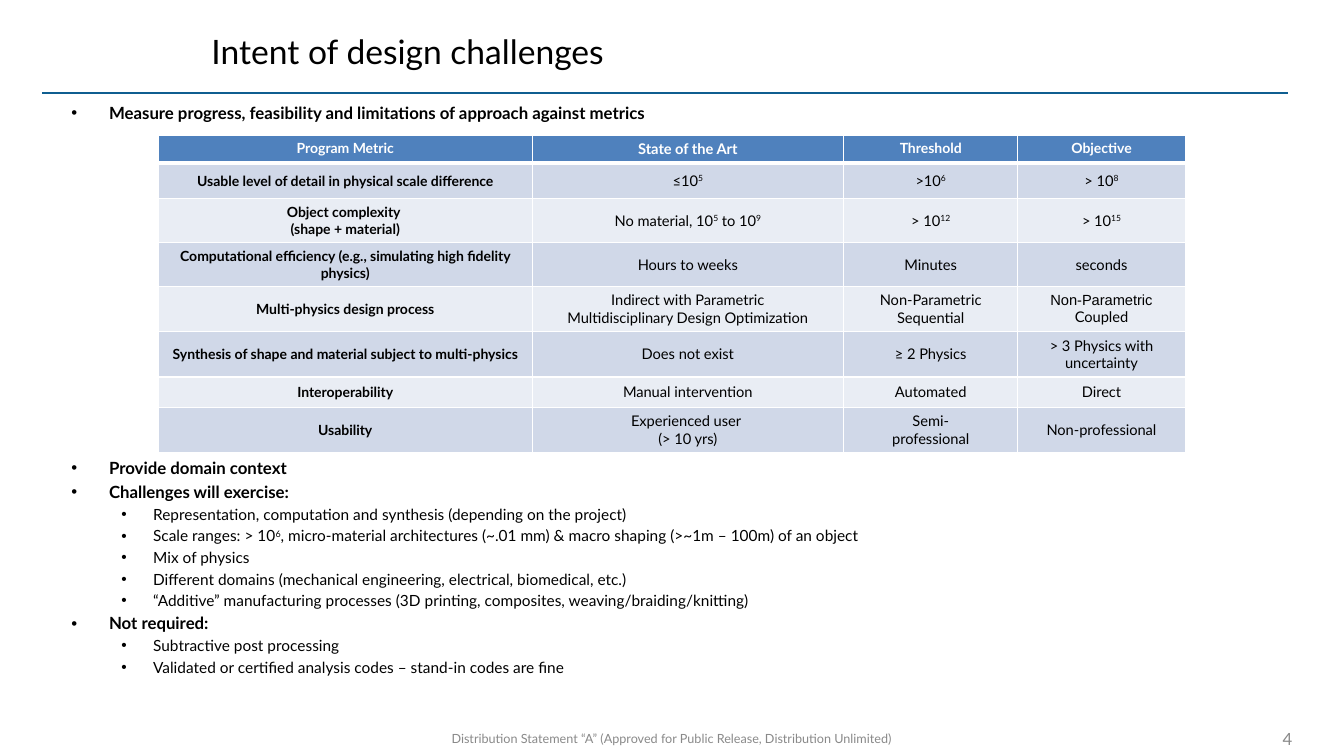
from lxml import etree
from pptx import Presentation
from pptx.dml.color import RGBColor
from pptx.enum.shapes import MSO_CONNECTOR
from pptx.enum.text import MSO_ANCHOR, PP_ALIGN
from pptx.oxml.ns import qn
from pptx.util import Cm, Pt

LEFT, CENTER, RIGHT = PP_ALIGN.LEFT, PP_ALIGN.CENTER, PP_ALIGN.RIGHT
TOP, MIDDLE = MSO_ANCHOR.TOP, MSO_ANCHOR.MIDDLE
STRAIGHT = MSO_CONNECTOR.STRAIGHT

# Content: text between ^ marks is superscript, a tuple holds (text, font) runs
TITLE = "Intent of design challenges"
FOOTER = "Distribution Statement “A” (Approved for Public Release, Distribution Unlimited)"
PAGE_NUMBER = "4"

INTRO_BULLETS = [
    (0, "Measure progress, feasibility and limitations of approach against metrics"),
]
CHALLENGE_BULLETS = [
    (0, "Provide domain context"),
    (0, "Challenges will exercise:"),
    (1, "Representation, computation and synthesis (depending on the project)"),
    (1, "Scale ranges: > 10^6^, micro-material architectures (~.01 mm) "
        "& macro shaping (>~1m – 100m) of an object"),
    (1, "Mix of physics"),
    (1, "Different domains (mechanical engineering, electrical, biomedical, etc.)"),
    (1, "“Additive” manufacturing processes (3D printing, composites, "
        "weaving/braiding/knitting)"),
    (0, "Not required:"),
    (1, "Subtractive post processing"),
    (1, "Validated or certified analysis codes – stand-in codes are fine"),
]

METRICS = [
    ("Program Metric", "State of the Art", "Threshold", "Objective"),
    ("Usable level of detail in physical scale difference", "≤10^5^", ">10^6^", "> 10^8^"),
    ("Object complexity \n(shape + material)", "No material, 10^5^ to 10^9^",
     "> 10^12^", "> 10^15^"),
    ("Computational efficiency (e.g., simulating high fidelity physics)",
     "Hours to weeks", "Minutes", "seconds"),
    ("Multi-physics design process",
     "Indirect with Parametric\nMultidisciplinary Design Optimization",
     "Non-Parametric Sequential", (("Non-Parametric ", "Arial"), ("Coupled", "Lato"))),
    ("Synthesis of shape and material subject to multi-physics",
     "Does not exist", "≥ 2 Physics", "> 3 Physics with uncertainty"),
    ("Interoperability", "Manual intervention", "Automated", "Direct"),
    ("Usability", "Experienced user \n(> 10 yrs)", "Semi-\nprofessional", "Non-professional"),
]
COLUMN_WIDTHS = [9.42, 7.85, 4.39, 4.22]
ROW_HEIGHTS = [0.58, 0.91, 0.91, 0.91, 0.97, 1.04, 0.76, 0.97]

# Formats
BLACK, WHITE, GREY, RULE_BLUE = "000000", "FFFFFF", "898989", "0F5E90"
HEADER_FILL, BAND_FILLS = "4F81BD", ("E9EDF4", "D0D8E8")
BULLET_LEVELS = [
    {"size": 12, "bold": True, "margin": 0.95, "hanging": 0.95},
    {"size": 11, "bold": False, "margin": 2.06, "hanging": 0.8},
]


def color(hex_value):
    return RGBColor.from_string(hex_value)


def set_font(font, size, hex_value, bold=False, name="Lato"):
    for key, value in {"name": name, "size": Pt(size), "bold": bold}.items():
        setattr(font, key, value)
    font.color.rgb = color(hex_value)


def write_runs(paragraph, content, size, hex_value, bold=False):
    runs = [(content, "Lato")] if isinstance(content, str) else content
    for text, name in runs:
        for index, part in enumerate(text.split("^")):
            if not part:
                continue
            run = paragraph.add_run()
            run.text = part
            set_font(run.font, size, hex_value, bold, name)
            if index % 2:
                run._r.get_or_add_rPr().set("baseline", "30000")


def add_text_box(slide, box, anchor=TOP):
    frame = slide.shapes.add_textbox(*map(Cm, box)).text_frame
    frame.word_wrap = True
    frame.vertical_anchor = anchor
    return frame


def add_label(slide, box, text, size, hex_value, alignment):
    paragraph = add_text_box(slide, box, MIDDLE).paragraphs[0]
    paragraph.alignment = alignment
    write_runs(paragraph, text, size, hex_value)


def add_bullets(slide, box, bullets):
    frame = add_text_box(slide, box)
    for index, (level, text) in enumerate(bullets):
        style = BULLET_LEVELS[level]
        paragraph = frame.add_paragraph() if index else frame.paragraphs[0]
        paragraph.level = level
        paragraph.space_before = Pt(0.2 * style["size"] if index else 0)
        properties = paragraph._p.get_or_add_pPr()
        properties.set("marL", str(Cm(style["margin"])))
        properties.set("indent", str(-Cm(style["hanging"])))
        etree.SubElement(properties, qn("a:buFont")).set("typeface", "Arial")
        etree.SubElement(properties, qn("a:buChar")).set("char", "•")
        write_runs(paragraph, text, style["size"], BLACK, style["bold"])


def set_borders(cell, widths):
    properties = cell._tc.get_or_add_tcPr()
    for index, (side, width) in enumerate(widths.items()):
        line = etree.Element(qn("a:ln" + side), w=str(Pt(width)))
        fill = etree.SubElement(line, qn("a:solidFill"))
        etree.SubElement(fill, qn("a:srgbClr")).set("val", WHITE)
        properties.insert(index, line)


def fill_cell(cell, content, row, column):
    header = row == 0
    cell.fill.solid()
    cell.fill.fore_color.rgb = color(HEADER_FILL if header else BAND_FILLS[row % 2])
    cell.vertical_anchor = TOP if header and column != 1 else MIDDLE
    set_borders(cell, {"L": 1, "R": 1, "T": 3 if row == 1 else 1, "B": 3 if header else 1})
    size = 10 if column == 0 or (header and column > 1) else 10.5
    lines = content.split("\n") if isinstance(content, str) else [content]
    for index, line in enumerate(lines):
        frame = cell.text_frame
        paragraph = frame.add_paragraph() if index else frame.paragraphs[0]
        paragraph.alignment = CENTER
        write_runs(paragraph, line, size, WHITE if header else BLACK, header or column == 0)


def add_metrics_table(slide, left, top):
    size = (sum(COLUMN_WIDTHS), sum(ROW_HEIGHTS))
    table = slide.shapes.add_table(
        len(METRICS), len(COLUMN_WIDTHS), *map(Cm, (left, top, *size))).table
    table.horz_banding = False
    for column, width in zip(table.columns, COLUMN_WIDTHS):
        column.width = Cm(width)
    for row, height in zip(table.rows, ROW_HEIGHTS):
        row.height = Cm(height)
    for row, contents in enumerate(METRICS):
        for column, content in enumerate(contents):
            fill_cell(table.cell(row, column), content, row, column)


def add_title_rule(slide, left, right, height):
    rule = slide.shapes.add_connector(STRAIGHT, *map(Cm, (left, height, right, height)))
    rule.line.color.rgb = color(RULE_BLUE)
    rule.line.width = Pt(1.75)
    etree.SubElement(rule._element.spPr, qn("a:effectLst"))


def main():
    presentation = Presentation()
    presentation.slide_width, presentation.slide_height = Cm(33.87), Cm(19.05)
    slide = presentation.slides.add_slide(presentation.slide_layouts[6])

    # Frame of the slide
    add_title_rule(slide, 1.07, 32.46, 2.34)
    add_label(slide, (4.93, 18.19, 23.98, 0.84), FOOTER, 9, GREY, CENTER)
    add_label(slide, (30, 18.21, 2.82, 0.81), PAGE_NUMBER, 12, GREY, RIGHT)
    add_label(slide, (5.08, 0.43, 27.38, 1.7), TITLE, 24, BLACK, LEFT)

    # Bullets above and below the table
    add_bullets(slide, (1.55, 2.46, 30.76, 0.9), INTRO_BULLETS)
    add_bullets(slide, (1.55, 11.42, 30.76, 6.7), CHALLENGE_BULLETS)
    add_metrics_table(slide, 3.99, 3.4)

    presentation.save("out.pptx")


if __name__ == "__main__":
    main()
